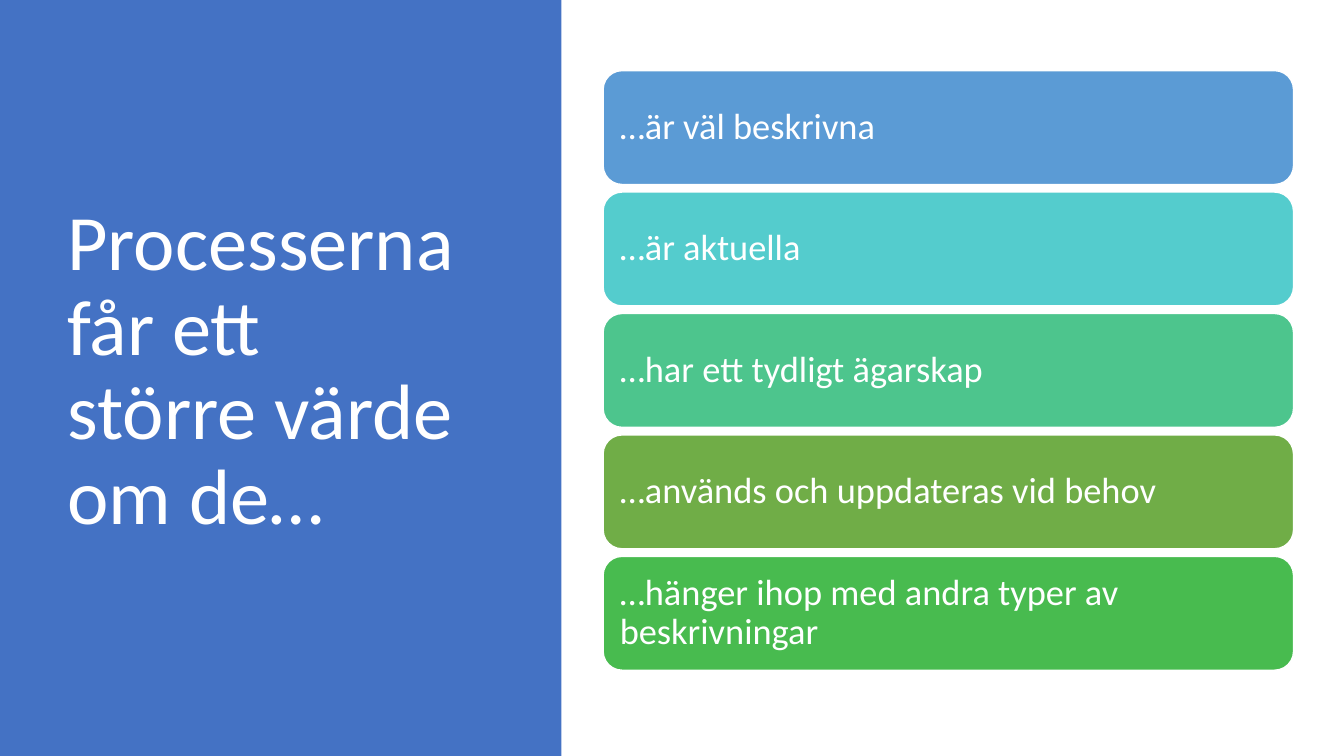
from dataclasses import dataclass

from pptx import Presentation
from pptx import util as u
from pptx.dml.color import RGBColor
from pptx.enum import shapes, text
from pptx.shapes.autoshape import Shape
from pptx.slide import Slide

FONT = "Calibri"
WHITE = "FFFFFF"
SLIDE_WIDTH, SLIDE_HEIGHT = u.Cm(33.87), u.Cm(19.05)
CARD_LEFT, CARD_TOP = 15.2, 1.78
CARD_WIDTH, CARD_HEIGHT = 17.4, 2.87
CARD_PITCH = 3.06


@dataclass(frozen=True)
class Card:
    wording: str
    fill: str


CARDS = [
    Card("…är väl beskrivna", "5B9BD5"),
    Card("…är aktuella", "54CCCD"),
    Card("…har ett tydligt ägarskap", "4DC58D"),
    Card("…används och uppdateras vid behov", "70AD47"),
    Card("…hänger ihop med andra typer av beskrivningar", "48BB4F"),
]


def color(value: str) -> RGBColor:
    return RGBColor.from_string(value)


def write(box: Shape, wording: str, size: float) -> None:
    """Set white, left-aligned, vertically centred text."""
    frame = box.text_frame
    frame.text = wording
    frame.word_wrap = True
    frame.vertical_anchor = text.MSO_ANCHOR.MIDDLE
    para = frame.paragraphs[0]
    para.alignment = text.PP_ALIGN.LEFT
    para.line_spacing = 0.9
    for span in para.runs:
        span.font.name = FONT
        span.font.size = u.Pt(size)
        span.font.color.rgb = color(WHITE)


def add_panel(page: Slide) -> None:
    panel = page.shapes.add_shape(
        shapes.MSO_SHAPE.RECTANGLE, 0, 0, u.Cm(14.15), SLIDE_HEIGHT
    )
    panel.shadow.inherit = False
    panel.fill.solid()
    panel.fill.fore_color.rgb = color("4472C4")
    panel.line.fill.background()


def add_title(page: Slide) -> None:
    title = page.shapes.add_textbox(u.Cm(1.45), u.Cm(1.73), u.Cm(10.5), u.Cm(15.29))
    write(title, "Processerna får ett större värde om de…", 56)


def add_card(page: Slide, card: Card, top: float) -> None:
    box = page.shapes.add_shape(
        shapes.MSO_SHAPE.ROUNDED_RECTANGLE,
        u.Cm(CARD_LEFT), u.Cm(top), u.Cm(CARD_WIDTH), u.Cm(CARD_HEIGHT),
    )
    box.shadow.inherit = False
    box.fill.solid()
    box.fill.fore_color.rgb = color(card.fill)
    box.line.color.rgb = color(WHITE)
    box.line.width = u.Pt(1)
    frame = box.text_frame
    frame.margin_left = frame.margin_right = u.Cm(0.28)
    frame.margin_top = frame.margin_bottom = u.Cm(0.28)
    write(box, card.wording, 26)


def main() -> None:
    deck = Presentation()
    deck.slide_width, deck.slide_height = SLIDE_WIDTH, SLIDE_HEIGHT
    page = deck.slides.add_slide(deck.slide_layouts[6])
    add_panel(page)
    add_title(page)
    for index, card in enumerate(CARDS):
        add_card(page, card, CARD_TOP + index * CARD_PITCH)
    deck.save("out.pptx")


if __name__ == "__main__":
    main()
